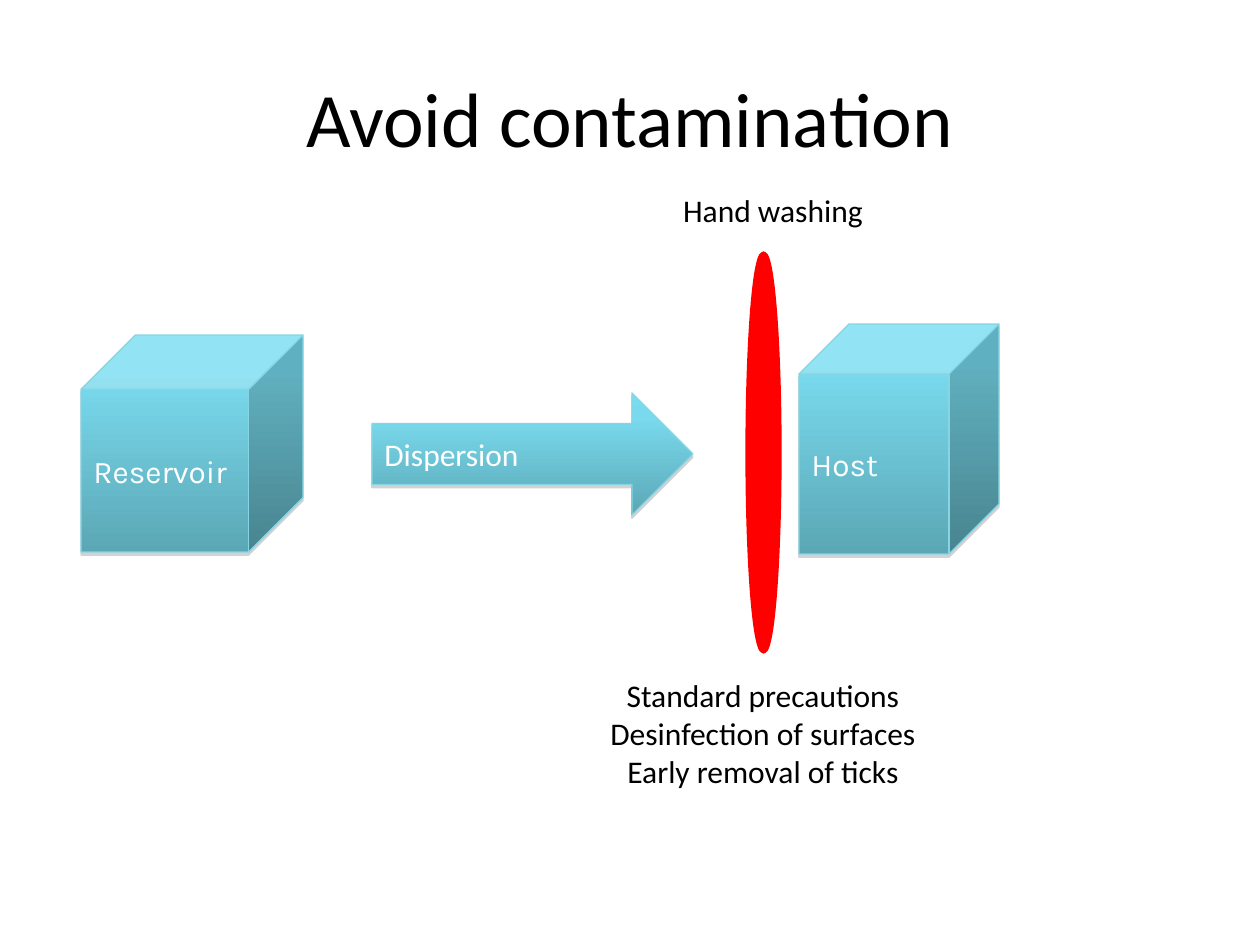
from dataclasses import dataclass

import lxml.etree
import pptx
import pptx.dml.color
import pptx.enum.shapes
import pptx.enum.text
import pptx.oxml.ns
import pptx.util

EMU_PER_PX = 914400 / 126
ShapeKind = pptx.enum.shapes.MSO_SHAPE
Align = pptx.enum.text.PP_ALIGN
Anchor = pptx.enum.text.MSO_ANCHOR
qn = pptx.oxml.ns.qn


@dataclass(frozen=True)
class Theme:
    ink: str = "000000"
    light: str = "FFFFFF"
    edge: str = "86D5E4"
    barrier: str = "FF0000"
    shadow: str = "808080"
    gradient: tuple[tuple[int, str], ...] = ((0, "77DDF0"), (20, "79DAED"), (100, "5BA7B5"))
    body_font: str = "Calibri"
    cube_font: str = "Karla"
    title_size: int = 44
    body_size: int = 18


THEME = Theme()


@dataclass(frozen=True)
class Frame:
    left: int
    top: int
    width: int
    height: int

    def emu(self) -> list[int]:
        return [round(px * EMU_PER_PX) for px in (self.left, self.top, self.width, self.height)]


@dataclass(frozen=True)
class Block:
    frame: Frame
    kind: ShapeKind
    label: str
    font: str


@dataclass(frozen=True)
class Caption:
    frame: Frame
    lines: tuple[str, ...]
    size: int = THEME.body_size
    anchor: Anchor = Anchor.TOP


BLOCKS = (
    Block(Frame(81, 335, 222, 217), ShapeKind.CUBE, "Reservoir", THEME.cube_font),
    Block(Frame(799, 324, 200, 230), ShapeKind.CUBE, "Host", THEME.cube_font),
    Block(Frame(372, 393, 321, 122), ShapeKind.RIGHT_ARROW, "Dispersion", THEME.body_font),
)
BARRIER = Frame(748, 254, 31, 397)
CAPTIONS = (
    Caption(Frame(63, 38, 1134, 157), ("Avoid contamination",), THEME.title_size, Anchor.MIDDLE),
    Caption(Frame(591, 185, 364, 50), ("Hand washing",)),
    Caption(
        Frame(581, 670, 364, 127),
        ("Standard precautions", "Desinfection of surfaces", "Early removal of ticks"),
    ),
)


def rgb(value: str) -> pptx.dml.color.RGBColor:
    return pptx.dml.color.RGBColor.from_string(value)


def write_lines(box, lines: tuple[str, ...], font: str, size: int, color: str,
                align: Align, anchor: Anchor) -> None:
    frame = box.text_frame
    frame.word_wrap = True
    frame.vertical_anchor = anchor
    for index, line in enumerate(lines):
        para = frame.add_paragraph() if index else frame.paragraphs[0]
        para.alignment = align
        span = para.add_run()
        span.text = line
        span.font.name = font
        span.font.size = pptx.util.Pt(size)
        span.font.color.rgb = rgb(color)


def add_color(parent, color: str):
    return lxml.etree.SubElement(parent, qn("a:srgbClr"), val=color)


def paint_gradient(shape) -> None:
    shape.fill.gradient()
    shape.fill.gradient_angle = 270
    stops = shape._element.spPr.find(f".//{qn('a:gsLst')}")
    for stop in list(stops):
        stops.remove(stop)
    for percent, color in THEME.gradient:
        stop = lxml.etree.SubElement(stops, qn("a:gs"), pos=str(percent * 1000))
        add_color(stop, color)


def cast_shadow(shape) -> None:
    effects = shape._element.spPr.find(qn("a:effectLst"))
    shadow = lxml.etree.SubElement(
        effects, qn("a:outerShdw"), blurRad="0", dist=str(pptx.util.Pt(1.8)),
        dir="5400000", rotWithShape="0",
    )
    lxml.etree.SubElement(add_color(shadow, THEME.shadow), qn("a:alpha"), val="35000")


def add_outlined(page, kind: ShapeKind, frame: Frame, color: str, width: float):
    shape = page.shapes.add_shape(kind, *frame.emu())
    shape.shadow.inherit = False
    shape.line.color.rgb = rgb(color)
    shape.line.width = pptx.util.Pt(width)
    return shape


def add_block(page, block: Block) -> None:
    shape = add_outlined(page, block.kind, block.frame, THEME.edge, 0.75)
    paint_gradient(shape)
    cast_shadow(shape)
    write_lines(shape, (block.label,), block.font, THEME.body_size, THEME.light,
                Align.LEFT, Anchor.MIDDLE)


def add_barrier(page) -> None:
    shape = add_outlined(page, ShapeKind.OVAL, BARRIER, THEME.barrier, 3)
    shape.fill.solid()
    shape.fill.fore_color.rgb = rgb(THEME.barrier)


def add_caption(page, caption: Caption) -> None:
    box = page.shapes.add_textbox(*caption.frame.emu())
    write_lines(box, caption.lines, THEME.body_font, caption.size, THEME.ink,
                Align.CENTER, caption.anchor)


def main() -> None:
    deck = pptx.Presentation()
    deck.slide_width, deck.slide_height = Frame(0, 0, 1260, 945).emu()[2:]
    page = deck.slides.add_slide(deck.slide_layouts[6])
    for block in BLOCKS:
        add_block(page, block)
    add_barrier(page)
    for caption in CAPTIONS:
        add_caption(page, caption)
    deck.save("out.pptx")


if __name__ == "__main__":
    main()
